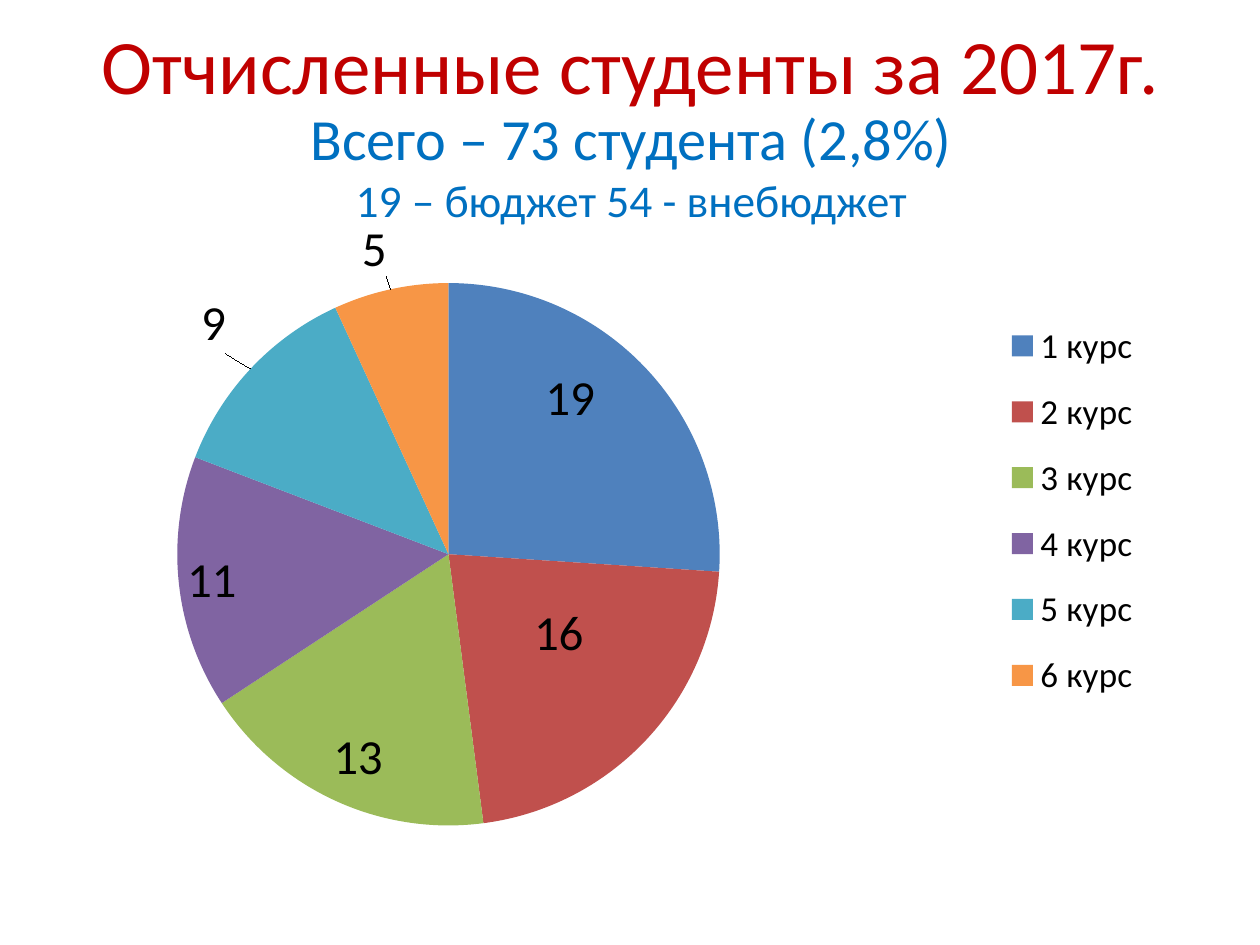
from lxml import etree
from pptx import Presentation
from pptx.chart.data import CategoryChartData as Data
from pptx.dml.color import RGBColor
from pptx.enum.chart import XL_CHART_TYPE as Kind
from pptx.enum.chart import XL_LABEL_POSITION as Spot
from pptx.enum.chart import XL_LEGEND_POSITION as Side
from pptx.enum.text import MSO_ANCHOR as Anchor
from pptx.enum.text import PP_ALIGN as Align
from pptx.oxml.ns import qn
from pptx.util import Cm, Pt

FONT = "Calibri"
RED = RGBColor(0xC0, 0x00, 0x00)
BLUE = RGBColor(0x00, 0x70, 0xC0)
BLACK = RGBColor(0x00, 0x00, 0x00)

# Course, students, slice colour, label shift from the slice centre
SLICES = [
    ("1 курс", 19, RGBColor(0x4F, 0x81, 0xBD), (0.02, -0.1)),
    ("2 курс", 16, RGBColor(0xC0, 0x50, 0x4D), (0.01, -0.02)),
    ("3 курс", 13, RGBColor(0x9B, 0xBB, 0x59), (-0.03, 0.13)),
    ("4 курс", 11, RGBColor(0x80, 0x64, 0xA2), (-0.09, 0.02)),
    ("5 курс", 9, RGBColor(0x4B, 0xAC, 0xC6), (-0.12, -0.22)),
    ("6 курс", 5, RGBColor(0xF7, 0x96, 0x46), (-0.04, -0.28)),
]


def style(font, size, color=BLACK):
    font.name = FONT
    font.size = Pt(size)
    font.color.rgb = color


def add_text(slide, lines, top, color):
    """Centred box; lines holds pairs of text and size."""
    box = slide.shapes.add_textbox(Cm(1.3), Cm(top), Cm(22.86), Cm(2.36))
    frame = box.text_frame
    frame.word_wrap = True
    frame.vertical_anchor = Anchor.MIDDLE
    for i, (text, size) in enumerate(lines):
        para = frame.add_paragraph() if i else frame.paragraphs[0]
        para.alignment = Align.CENTER
        run = para.add_run()
        run.text = text
        style(run.font, size, color)


def place(parent, after, **vals):
    """Put a manual layout into a chart part, after the named child."""
    for old in parent.findall(qn("c:layout")):
        parent.remove(old)
    layout = etree.Element(qn("c:layout"))
    manual = etree.SubElement(layout, qn("c:manualLayout"))
    for name, val in vals.items():
        etree.SubElement(manual, qn("c:" + name)).set("val", str(val))
    if after:
        parent.find(qn(after)).addnext(layout)
    else:
        parent.insert(0, layout)


def add_pie(slide):
    data = Data()
    data.categories = [row[0] for row in SLICES]
    data.add_series("Series 1", [row[1] for row in SLICES])
    chart = slide.shapes.add_chart(
        Kind.PIE, Cm(1.27), Cm(4.45), Cm(22.86), Cm(12.57), data
    ).chart
    chart.has_title = False
    style(chart.font, 18)
    plot = chart.plots[0]
    plot.vary_by_categories = True
    area = chart.element.find(".//" + qn("c:plotArea"))
    place(area, None, layoutTarget="inner", xMode="edge", yMode="edge",
          x=0.02, y=0.1, w=0.64, h=0.87)

    # Legend
    chart.has_legend = True
    legend = chart.legend
    legend.position = Side.RIGHT
    legend.include_in_layout = False
    style(legend.font, 20)
    place(legend.element if hasattr(legend, "element") else
          chart.element.find(".//" + qn("c:legend")), "c:legendPos",
          xMode="edge", yMode="edge", x=0.8, y=0.13, w=0.18, h=0.67)

    # Slices and their labels
    series = plot.series[0]
    labels = series.data_labels
    labels.show_value = True
    style(labels.font, 28)
    for i, (_, _, color, (dx, dy)) in enumerate(SLICES):
        point = series.points[i]
        point.format.fill.solid()
        point.format.fill.fore_color.rgb = color
        label = point.data_label
        style(label.font, 28)
        label.position = Spot.CENTER
        node = series.data_labels._element.findall(qn("c:dLbl"))[i]
        place(node, "c:idx", x=dx, y=dy)


def main():
    prs = Presentation()
    prs.slide_width, prs.slide_height = Cm(25.4), Cm(19.05)
    slide = prs.slides.add_slide(prs.slide_layouts[6])

    # Headings
    add_text(slide, [("Отчисленные студенты за 2017г.", 44)], 0.1, RED)
    add_pie(slide)
    add_text(slide, [("Всего – 73 студента (2,8%)", 33.3),
                     ("19 – бюджет 54 - внебюджет", 25.9)], 2.13, BLUE)
    prs.save("out.pptx")


if __name__ == "__main__":
    main()
